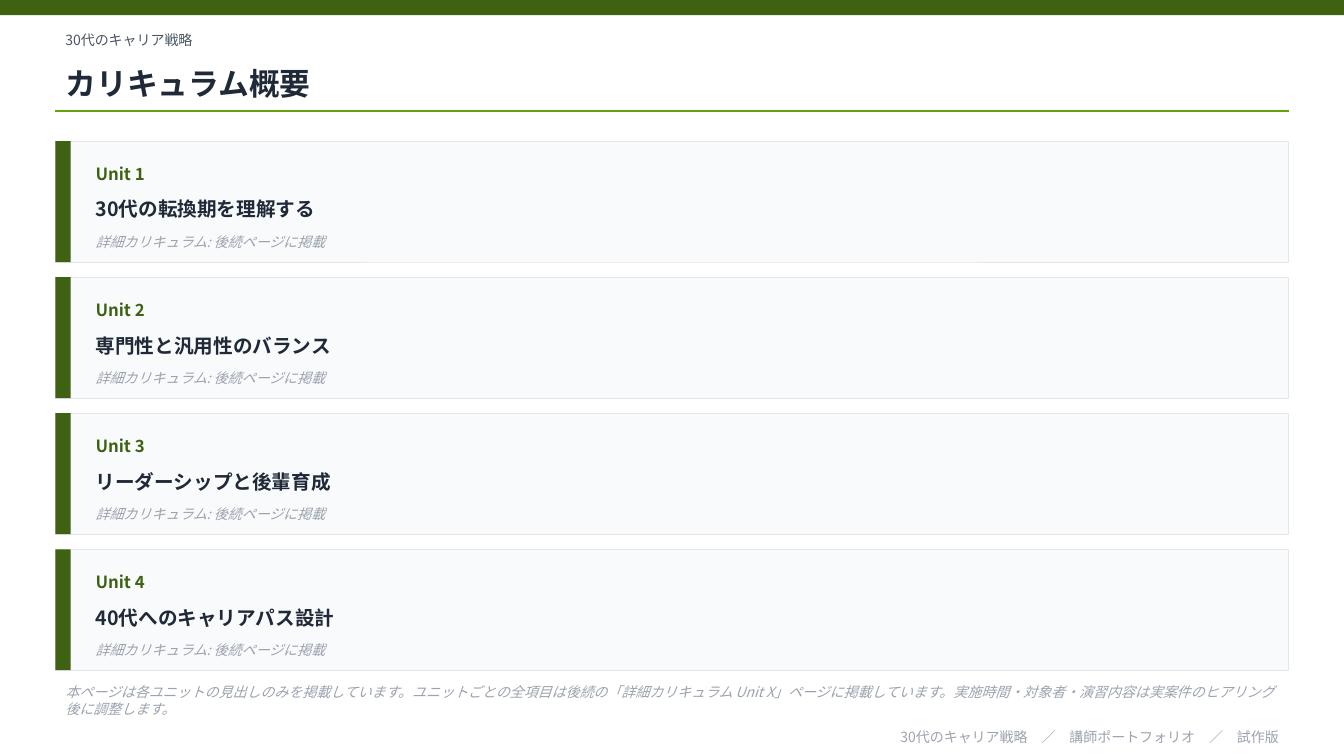
import pptx
import pptx.dml.color
import pptx.enum.shapes
import pptx.enum.text
import pptx.oxml.ns
import pptx.util
from dataclasses import dataclass
from lxml import etree

COURSE = "30代のキャリア戦略"
TITLE = "カリキュラム概要"
UNITS = [
    "30代の転換期を理解する",
    "専門性と汎用性のバランス",
    "リーダーシップと後輩育成",
    "40代へのキャリアパス設計",
]
DETAIL = "詳細カリキュラム: 後続ページに掲載"
NOTE = (
    "本ページは各ユニットの見出しのみを掲載しています。"
    "ユニットごとの全項目は後続の「詳細カリキュラム Unit X」ページに掲載しています。"
    "実施時間・対象者・演習内容は実案件のヒアリング後に調整します。"
)
FOOTER = "　／　".join([COURSE, "講師ポートフォリオ", "試作版"])


@dataclass(frozen=True)
class Theme:
    font: str = "Noto Sans CJK JP"
    white: str = "FFFFFF"
    green: str = "3F6212"
    lime: str = "65A30D"
    ink: str = "1F2937"
    slate: str = "4B5563"
    muted: str = "9CA3AF"
    panel: str = "F9FAFB"
    border: str = "E5E7EB"
    title: int = 22
    heading: int = 14
    label: int = 12
    small: int = 10


THEME = Theme()
PX = 9144  # EMU, 100 px to the inch
PAGE_WIDTH, PAGE_HEIGHT = 1333, 750
LEFT, WIDTH = 55, 1223
RULE_TOP = 110
CARD_TOP, CARD_HEIGHT, CARD_GAP = 140, 120, 15
BAR = 15
TEXT_LEFT, TEXT_WIDTH = LEFT + 30, WIDTH - 50


def px(*lengths):
    return [pptx.util.Emu(length * PX) for length in lengths]


def rgb(code):
    return pptx.dml.color.RGBColor.from_string(code)


def write(box, text, *, size=THEME.small, color=THEME.muted, bold=False,
          italic=False, align="LEFT"):
    frame = box.text_frame
    frame.word_wrap = True
    frame.auto_size = pptx.enum.text.MSO_AUTO_SIZE.NONE
    frame.vertical_anchor = pptx.enum.text.MSO_ANCHOR.MIDDLE
    para = frame.paragraphs[0]
    para.alignment = getattr(pptx.enum.text.PP_ALIGN, align)
    span = para.add_run()
    span.text = text
    font = span.font
    font.name, font.size = THEME.font, pptx.util.Pt(size)
    font.bold, font.italic = bold, italic
    font.color.rgb = rgb(color)
    east_asian = etree.SubElement(font._element, pptx.oxml.ns.qn("a:ea"))
    east_asian.set("typeface", THEME.font)


def add_text(page, area, text, **style):
    write(page.shapes.add_textbox(*px(*area)), text, **style)


def add_block(page, area, fill, border=None):
    block = page.shapes.add_shape(
        pptx.enum.shapes.MSO_SHAPE.RECTANGLE, *px(*area))
    block.shadow.inherit = False
    block.fill.solid()
    block.fill.fore_color.rgb = rgb(fill)
    if border:
        block.line.color.rgb = rgb(border)
        block.line.width = pptx.util.Pt(0.5)
    else:
        block.line.fill.background()


def add_rule(page):
    rule = page.shapes.add_connector(
        pptx.enum.shapes.MSO_CONNECTOR.STRAIGHT,
        *px(LEFT, RULE_TOP, LEFT + WIDTH, RULE_TOP))
    rule.line.color.rgb = rgb(THEME.lime)
    rule.line.width = pptx.util.Pt(1)
    etree.SubElement(rule._element.spPr, pptx.oxml.ns.qn("a:effectLst"))


def add_unit(page, index, heading):
    top = CARD_TOP + index * (CARD_HEIGHT + CARD_GAP)
    add_block(page, (LEFT, top, WIDTH, CARD_HEIGHT), THEME.panel, THEME.border)
    add_block(page, (LEFT, top, BAR, CARD_HEIGHT), THEME.green)
    add_text(page, (TEXT_LEFT, top + 12, 150, 40), f"Unit {index + 1}",
             size=THEME.label, color=THEME.green, bold=True)
    add_text(page, (TEXT_LEFT, top + 45, TEXT_WIDTH, 45), heading,
             size=THEME.heading, color=THEME.ink, bold=True)
    add_text(page, (TEXT_LEFT, top + 85, TEXT_WIDTH, 30), DETAIL, italic=True)


def main():
    deck = pptx.Presentation()
    deck.slide_width, deck.slide_height = px(PAGE_WIDTH, PAGE_HEIGHT)
    page = deck.slides.add_slide(deck.slide_layouts.get_by_name("Title Only"))
    page.background.fill.solid()
    page.background.fill.fore_color.rgb = rgb(THEME.white)

    add_block(page, (0, 0, PAGE_WIDTH, 15), THEME.green)
    add_text(page, (LEFT, 25, WIDTH, 30), COURSE, color=THEME.slate)
    title = page.shapes.title
    title.left, title.top, title.width, title.height = px(LEFT, 55, WIDTH, 55)
    write(title, TITLE, size=THEME.title, color=THEME.ink, bold=True)
    add_rule(page)

    for index, heading in enumerate(UNITS):
        add_unit(page, index, heading)

    add_text(page, (LEFT, 675, WIDTH, 40), NOTE, italic=True)
    add_text(page, (LEFT, 720, WIDTH, 22), FOOTER, align="RIGHT")
    deck.save("out.pptx")


if __name__ == "__main__":
    main()
